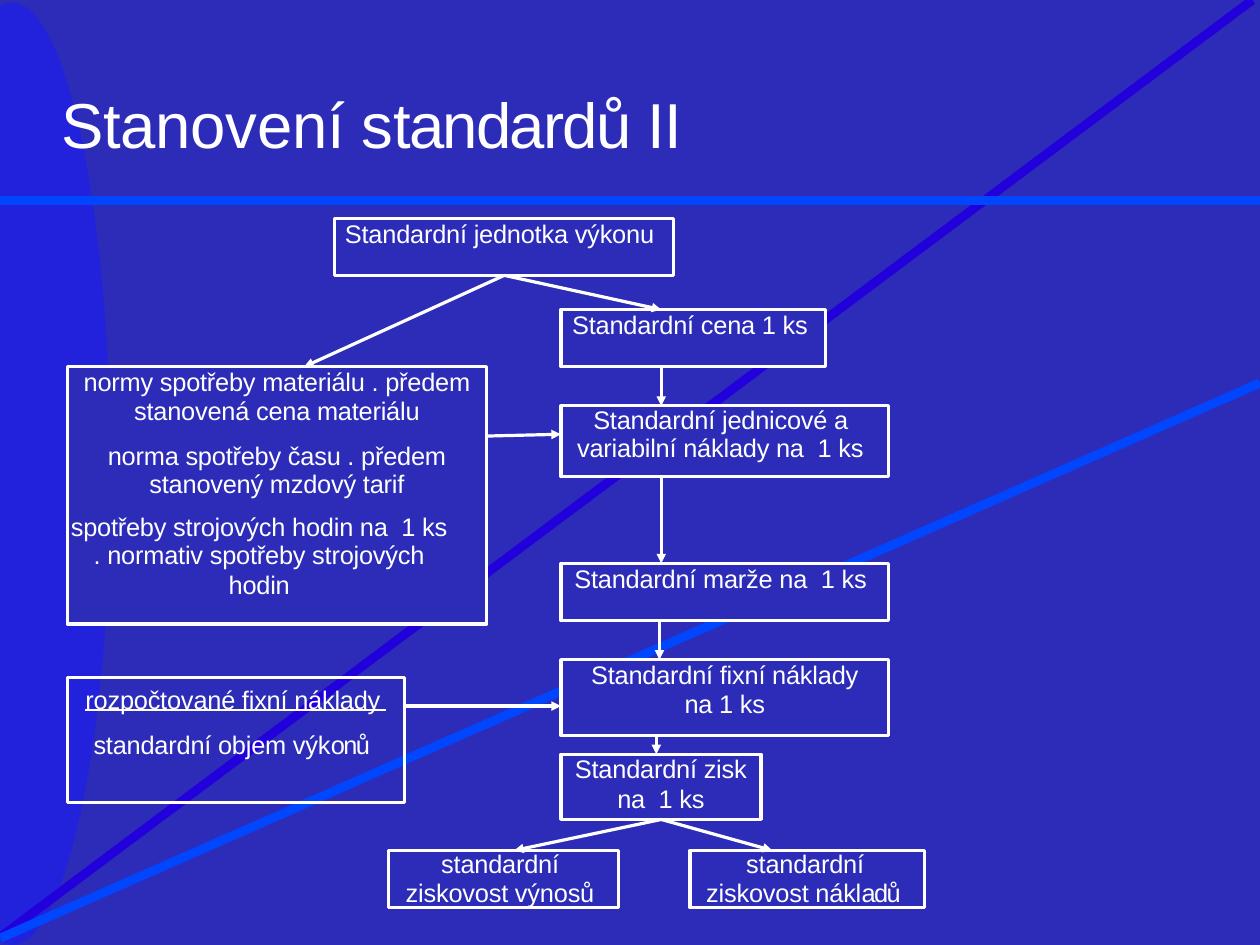
import math

from lxml import etree
from pptx import Presentation
from pptx.dml.color import RGBColor
from pptx.enum.shapes import MSO_CONNECTOR, MSO_SHAPE
from pptx.enum.text import MSO_ANCHOR, MSO_AUTO_SIZE, PP_ALIGN
from pptx.oxml.ns import qn
from pptx.util import Cm, Pt

LEFT, CENTER = PP_ALIGN.LEFT, PP_ALIGN.CENTER
TOP = MSO_ANCHOR.TOP
NO_AUTOFIT = MSO_AUTO_SIZE.NONE
RECTANGLE = MSO_SHAPE.RECTANGLE
STRAIGHT = MSO_CONNECTOR.STRAIGHT

FONT = "Arial"
COLORS = {"ground": "2C2CB8", "arc": "2222DC", "violet": "2200DC",
          "blue": "0046FF", "white": "FFFFFF"}
WIDTH, HEIGHT = 28.01, 21.0

# Content: a text is a string or a list of (piece, letter spacing in points)
TITLE = [("Stanovení s", -0.2), ("tandardů ", -1.1), ("II", -0.1)]

LOOSE, TIGHT = 18.6, 17.9  # line pitches in points
COLUMN = 12.47             # left edge of the calculation column, cm
centred = {"align": CENTER, "pitch": LOOSE}
machine = {"align": CENTER, "margin_right": 0.79}

# name: (left, top, width, height in cm, [(text, format), ...])
BOXES = {
    "unit": (7.44, 4.85, 7.54, 1.27,
             [("Standardní jednotka výkonu", {"margin": 0.23})]),
    "price": (COLUMN, 6.88, 5.89, 1.27,
              [("Standardní cena 1 ks", {"margin": 0.25})]),
    "variable": (COLUMN, 9.02, 7.29, 1.57,
                 [("Standardní jednicové a variabilní náklady na  1 ks",
                   {"margin": 0.36, "indent": 0.36, "pitch": TIGHT})]),
    "norms": (1.5, 8.15, 9.32, 5.72, [
        ("normy spotřeby materiálu . předem stanovená cena materiálu", centred),
        ("norma spotřeby času . předem stanovený mzdový tarif",
         {"align": CENTER, "margin": 0.79, "margin_right": 0.79,
          "pitch": TIGHT, "before": 10.3}),
        ("spotřeby strojových hodin na  1 ks",
         {**machine, "pitch": LOOSE, "before": 8.2}),
        (". normativ spotřeby strojových", {**machine, "pitch": TIGHT}),
        ("hodin", {**machine, "pitch": LOOSE})]),
    "margin": (COLUMN, 12.52, 7.29, 1.27,
               [("Standardní marže na  1 ks", {"margin": 0.3})]),
    "fixed": (COLUMN, 14.66, 7.29, 1.68,
              [("Standardní fixní náklady", centred), ("na 1 ks", centred)]),
    "budget": (1.5, 15.06, 7.49, 2.77, []),
    "profit": (COLUMN, 16.76, 4.45, 1.45,
               [("Standardní zisk", centred), ("na  1 ks", centred)]),
    "revenue_return": (8.64, 18.9, 5.11, 1.27,
                       [("standardní ziskovost výnosů",
                         {"margin": 0.38, "indent": 0.79, "pitch": TIGHT})]),
    "cost_return": (15.34, 18.9, 5.21, 1.27,
                    [([("standardní ziskovost nákl", -0.1), ("adů", -1)],
                      {"margin": 0.36, "indent": 0.89, "pitch": TIGHT})]),
}
# Fraction shown inside the budget box
FRACTION = [
    (1.9, 15.21, 6.9, 0.64, "rozpočtované fixní náklady"),
    (2.08, 16.21, 6.7, 0.69, [("standardní objem výk", -0.1), ("onů", -1)]),
]
# (from box, side, offset along it, to box, side, offset along it)
ARROWS = [
    ("unit", "bottom", 3.77, "norms", "top", 5.26),
    ("unit", "bottom", 3.77, "price", "top", 2.23),
    ("price", "bottom", 2.23, "variable", "top", 2.23),
    ("norms", "right", 1.54, "variable", "left", 0.63),
    ("variable", "bottom", 2.23, "margin", "top", 2.23),
    ("margin", "bottom", 2.19, "fixed", "top", 2.19),
    ("budget", "right", 0.63, "fixed", "left", 1.03),
    ("fixed", "bottom", 2.12, "profit", "top", 2.12),
    ("profit", "bottom", 2.23, "revenue_return", "top", 2.79),
    ("profit", "bottom", 2.23, "cost_return", "top", 1.83),
]
# Background stripes: (start, end, colour)
STRIPES = [
    ((27.84, 0), (0, 20.83), "violet"),
    ((WIDTH, 4.45), (0, 4.45), "blue"),
    ((WIDTH, 8.51), (0, 20.85), "blue"),
]


def color(name):
    return RGBColor.from_string(COLORS[name])


def write(para, text, size=16, align=LEFT, margin=0, indent=0,
          margin_right=0, pitch=None, before=0):
    para.alignment = align
    para.space_before = Pt(before)
    if pitch:
        para.line_spacing = Pt(pitch)
    properties = para._p.get_or_add_pPr()
    for key, value in (("marL", margin), ("indent", indent), ("marR", margin_right)):
        properties.set(key, str(Cm(value)))
    for piece, spacing in ([(text, -0.1)] if isinstance(text, str) else text):
        span = para.add_run()
        span.text = piece
        span.font.name, span.font.size = FONT, Pt(size)
        span.font.color.rgb = color("white")
        span._r.get_or_add_rPr().set("spc", str(round(spacing * 100)))


def prepare_frame(shape, inset_top=0):
    frame = shape.text_frame
    frame.word_wrap = True
    frame.auto_size = NO_AUTOFIT
    frame.vertical_anchor = TOP
    frame.margin_left = frame.margin_right = frame.margin_bottom = 0
    frame.margin_top = Cm(inset_top)
    return frame


def add_line(page, start, end, color_name="white", width=2, arrow=False):
    line = page.shapes.add_connector(STRAIGHT, *map(Cm, (*start, *end)))
    line.line.color.rgb = color(color_name)
    line.line.width = Pt(width)
    if arrow:
        etree.SubElement(line.line._get_or_add_ln(), qn("a:tailEnd"), type="triangle")
    etree.SubElement(line._element.spPr, qn("a:effectLst"))


def add_background(page):
    page.background.fill.solid()
    page.background.fill.fore_color.rgb = color("ground")
    # Ellipse cut off by the left edge of the slide
    center_x, center_y, radius_x, radius_y = 0.28, 10.53, 2.18, 10.47
    limit = math.acos(-center_x / radius_x)
    steps = 60
    angles = [limit * (2 * step / steps - 1) for step in range(steps + 1)]
    points = [(Cm(max(0, center_x + radius_x * math.cos(angle))),
               Cm(center_y + radius_y * math.sin(angle))) for angle in angles]
    builder = page.shapes.build_freeform(*points[0])
    builder.add_line_segments(points[1:], close=True)
    arc = builder.convert_to_shape()
    arc.shadow.inherit = False
    arc.fill.solid()
    arc.fill.fore_color.rgb = color("arc")
    arc.line.fill.background()
    for start, end, color_name in STRIPES:
        add_line(page, start, end, color_name, width=5.67)


def add_box(page, left, top, width, height, lines):
    box = page.shapes.add_shape(RECTANGLE, *map(Cm, (left, top, width, height)))
    box.shadow.inherit = False
    box.line.color.rgb = color("white")
    box.line.width = Pt(2)
    if not lines:
        box.fill.background()
        return
    box.fill.solid()
    box.fill.fore_color.rgb = color("ground")
    frame = prepare_frame(box)
    for number, (text, style) in enumerate(lines):
        para = frame.add_paragraph() if number else frame.paragraphs[0]
        write(para, text, **style)


def port(name, side, offset):
    left, top, width, height, _ = BOXES[name]
    return {"top": (left + offset, top), "bottom": (left + offset, top + height),
            "left": (left, top + offset), "right": (left + width, top + offset)}[side]


def main():
    deck = Presentation()
    deck.slide_width, deck.slide_height = Cm(WIDTH), Cm(HEIGHT)
    page = deck.slides.add_slide(deck.slide_layouts[5])
    add_background(page)

    # Title, in front of the background
    title = page.shapes.title
    title.left, title.top, title.width, title.height = map(Cm, (1.37, 1.14, 25.27, 2.46))
    write(prepare_frame(title, inset_top=0.74).paragraphs[0], TITLE, size=40)
    page.shapes._spTree.append(title._element)

    # Flow chart
    for box in BOXES.values():
        add_box(page, *box)
    for *place, text in FRACTION:
        label = page.shapes.add_textbox(*map(Cm, place))
        write(prepare_frame(label).paragraphs[0], text)
    add_line(page, (1.9, 15.77), (8.59, 15.77), width=1.3)
    for arrow in ARROWS:
        add_line(page, port(*arrow[:3]), port(*arrow[3:]), arrow=True)

    deck.save("out.pptx")


if __name__ == "__main__":
    main()
